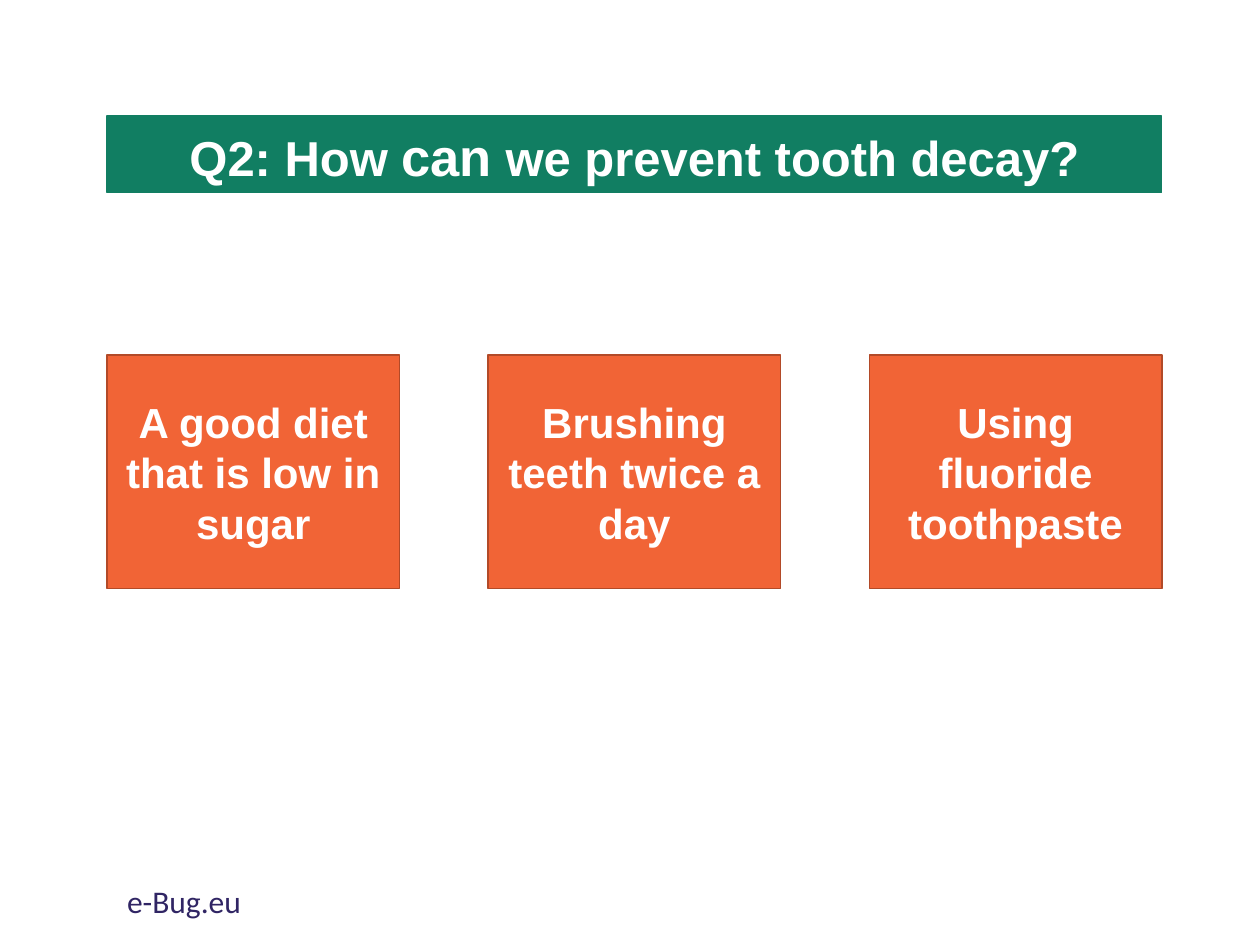
"""Builds a quiz answer slide on preventing tooth decay."""
from pptx import Presentation
from pptx import util as u
from pptx.dml.color import RGBColor
from pptx.enum import shapes, text

COLOURS = {"green": "117E62", "orange": "F16436", "rust": "B24A28",
           "white": "FFFFFF", "navy": "302564"}
QUESTION = [("Q2: How ", 28), ("can", 30), (" we prevent tooth decay?", 28)]
ANSWERS = ["A good diet that is low in sugar",
           "Brushing teeth twice a day",
           "Using fluoride toothpaste"]
SITE = "e-Bug.eu"

LEFT, CONTENT_WIDTH = 0.85, 8.37
ANSWER_TOP, ANSWER_WIDTH, ANSWER_HEIGHT = 2.82, 2.32, 1.85
ANSWER_STEP = (CONTENT_WIDTH - ANSWER_WIDTH) / (len(ANSWERS) - 1)
BOLD_WHITE = {"name": "Arial", "bold": True}
FOOTER_FONT = {"name": "Calibri", "bold": False}


def colour(name):
    return RGBColor.from_string(COLOURS[name])


def write(frame, runs, ink, font_format, align, **frame_format):
    for key, value in {"word_wrap": True, **frame_format}.items():
        setattr(frame, key, value)
    paragraph = frame.paragraphs[0]
    paragraph.alignment = align
    for words, size in runs:
        run = paragraph.add_run()
        run.text = words
        for key, value in {**font_format, "size": u.Pt(size)}.items():
            setattr(run.font, key, value)
        run.font.color.rgb = colour(ink)


def add_panel(slide, area, fill, line, line_width, runs, **frame_format):
    panel = slide.shapes.add_shape(shapes.MSO_SHAPE.RECTANGLE, *map(u.Inches, area))
    panel.shadow.inherit = False
    panel.fill.solid()
    panel.fill.fore_color.rgb = colour(fill)
    panel.line.color.rgb = colour(line)
    panel.line.width = u.Pt(line_width)
    write(panel.text_frame, runs, "white", BOLD_WHITE, text.PP_ALIGN.CENTER,
          vertical_anchor=text.MSO_ANCHOR.MIDDLE, **frame_format)


def main():
    deck = Presentation()
    deck.slide_width, deck.slide_height = u.Inches(10), u.Inches(7.5)
    slide = deck.slides.add_slide(deck.slide_layouts[6])

    add_panel(slide, (LEFT, 0.92, CONTENT_WIDTH, 0.61), "green", "green", 0.75, QUESTION,
              auto_size=text.MSO_AUTO_SIZE.SHAPE_TO_FIT_TEXT,
              margin_top=u.Inches(0.15), margin_bottom=u.Inches(0.13))
    for column, answer in enumerate(ANSWERS):
        area = (LEFT + column * ANSWER_STEP, ANSWER_TOP, ANSWER_WIDTH, ANSWER_HEIGHT)
        add_panel(slide, area, "orange", "rust", 1, [(answer, 24)])

    footer = slide.shapes.add_textbox(*map(u.Inches, (0.91, 6.95, 3.38, 0.4)))
    write(footer.text_frame, [(SITE, 18)], "navy", FOOTER_FONT, text.PP_ALIGN.LEFT)
    deck.save("out.pptx")


if __name__ == "__main__":
    main()
